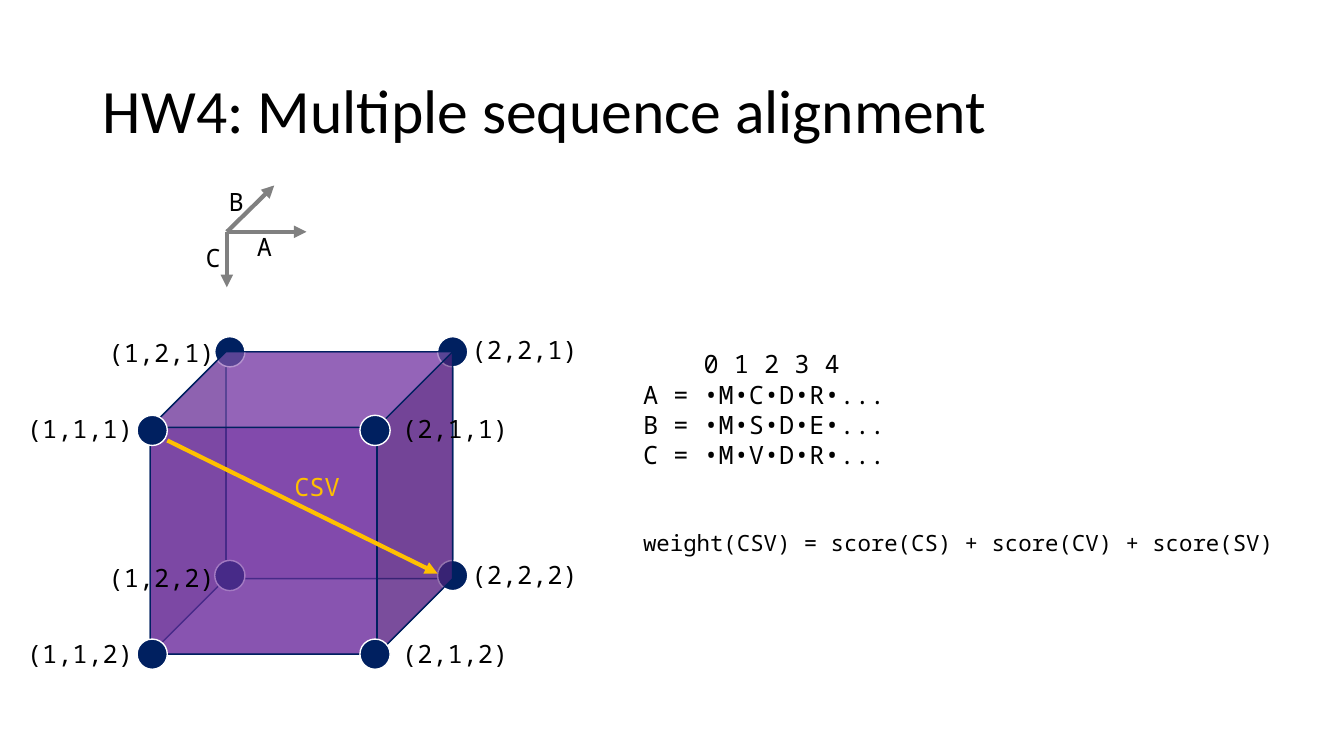
import itertools

import pptx
import pptx.dml.color
import pptx.enum.shapes
import pptx.enum.text
import pptx.oxml
import pptx.oxml.ns
import pptx.util

Inches = pptx.util.Inches
SHAPES = pptx.enum.shapes.MSO_SHAPE
COLORS = {"black": "000000", "navy": "002060", "purple": "7030A0",
          "gray": "808080", "gold": "FFC000", "white": "FFFFFF"}


def rgb(name):
    return pptx.dml.color.RGBColor.from_string(COLORS[name])


def add_xml(parent, tag, **attrs):
    el = pptx.oxml.parse_xml(f"<a:{tag} {pptx.oxml.ns.nsdecls('a')}/>")
    for key, value in attrs.items():
        el.set(key, str(value))
    parent.append(el)


def write(p, text, size=18, font="Noto Sans Mono", color="black", before=0, indent=0):
    r = p.add_run()
    r.text = text
    r.font.size = pptx.util.Pt(size)
    r.font.name = font
    r.font.color.rgb = rgb(color)
    if before:
        p.space_before = pptx.util.Pt(before)
    if indent:
        pPr = p._p.get_or_add_pPr()
        pPr.set("marL", str(Inches(indent)))
        pPr.set("indent", "0")


class Diagram:
    """Draw styled elements on the current slide."""

    def __init__(self, prs):
        self.s = prs.slides.add_slide(prs.slide_layouts[5])

    def title(self, text, x, y, w, h):
        sp = self.s.shapes.title
        sp.left, sp.top, sp.width, sp.height = map(Inches, (x, y, w, h))
        tf = sp.text_frame
        tf.vertical_anchor = pptx.enum.text.MSO_ANCHOR.MIDDLE
        p = tf.paragraphs[0]
        p.alignment = pptx.enum.text.PP_ALIGN.LEFT
        p.line_spacing = 0.9
        write(p, text, size=44, font="Calibri")

    def text(self, x, y, w, h, *lines, **style):
        tf = self.s.shapes.add_textbox(*map(Inches, (x, y, w, h))).text_frame
        tf.word_wrap = True
        for i, (line, extra) in enumerate(lines):
            p = tf.add_paragraph() if i else tf.paragraphs[0]
            write(p, line, **style, **extra)

    def label(self, text, x, y, w, **style):
        self.text(x, y, w, 0.4, (text, {}), **style)

    def shape(self, kind, x, y, size, fill, line, alpha=None, rotation=0):
        sp = self.s.shapes.add_shape(kind, *map(Inches, (x, y, size, size)))
        sp.shadow.inherit = False
        sp.rotation = rotation
        sp.fill.solid()
        sp.fill.fore_color.rgb = rgb(fill)
        sp.line.color.rgb = rgb(line)
        sp.line.width = pptx.util.Pt(1)
        if alpha:
            color = sp._element.spPr.find(".//" + pptx.oxml.ns.qn("a:srgbClr"))
            add_xml(color, "alpha", val=alpha * 1000)

    def cube(self, rotation=0):
        self.shape(SHAPES.CUBE, 1.49, 3.49, 3, "purple", "navy", 64, rotation)

    def nodes(self, x, y):
        for dx, dy in itertools.product((0, 2.21), (0, 2.22)):
            self.shape(SHAPES.OVAL, x + dx, y + dy, 0.3, "navy", "white")

    def arrow(self, x1, y1, x2, y2, color):
        sp = self.s.shapes.add_connector(
            pptx.enum.shapes.MSO_CONNECTOR.STRAIGHT, *map(Inches, (x1, y1, x2, y2)))
        sp.line.color.rgb = rgb(color)
        sp.line.width = pptx.util.Pt(3)
        add_xml(sp.line._get_or_add_ln(), "tailEnd", type="triangle")
        add_xml(sp._element.spPr, "effectLst")


def main():
    prs = pptx.Presentation()
    prs.slide_width, prs.slide_height = Inches(13.33), Inches(7.5)
    d = Diagram(prs)
    d.title("HW4: Multiple sequence alignment", 0.92, 0.4, 11.5, 1.45)

    d.cube(rotation=180)
    d.nodes(2.13, 3.34)
    d.cube()
    d.nodes(1.36, 4.12)

    axes = [("A", 3.04, 2.3, 2.45, 2.25), ("B", 2.72, 1.84, 2.17, 1.8),
            ("C", 2.25, 2.85, 1.94, 2.35)]
    for axis, tip_x, tip_y, x, y in axes:
        d.arrow(2.25, 2.3, tip_x, tip_y, "gray")
        d.label(axis, x, y, 0.41)

    d.text(6.28, 3.41, 7.05, 3,
           ("0 1 2 3 4", {"indent": 0.6}),
           ("A = •M•C•D•R•...", {}),
           ("B = •M•S•D•E•...", {}),
           ("C = •M•V•D•R•...", {}),
           ("weight(CSV) = score(CS) + score(CV) + score(SV)",
            {"size": 16, "before": 42.4}))

    edges = [(1, 1, 0.17, 4.05), (2, 1, 3.89, 4.05),
             (2, 2, 4.58, 3.27), (1, 2, 0.98, 3.3)]
    for (a, b, x, y), c in itertools.product(edges, (1, 2)):
        d.label(f"({a},{b},{c})", x, y + 2.23 * (c - 1), 1.32)

    d.arrow(1.66, 4.37, 4.34, 5.69, "gold")
    d.label("CSV", 2.82, 4.63, 0.88, color="gold")
    prs.save("out.pptx")


if __name__ == "__main__":
    main()
